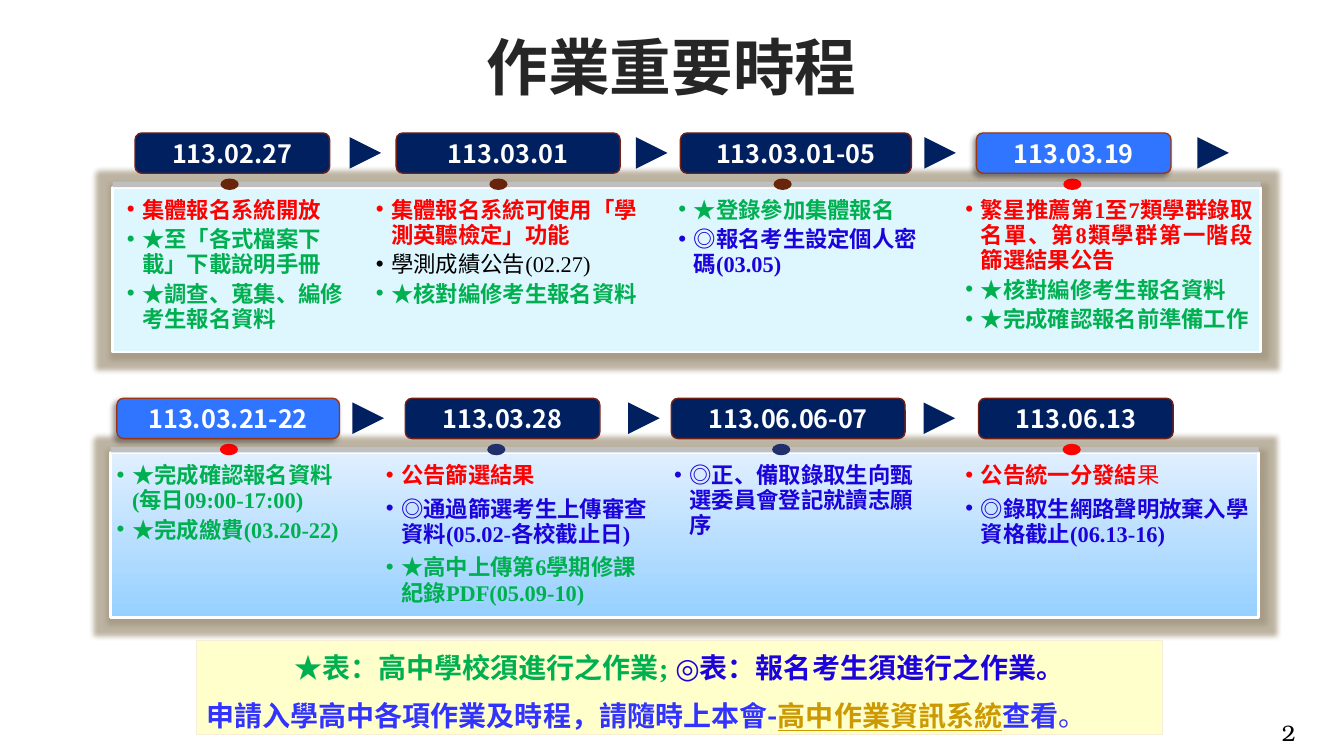
from collections import namedtuple

from lxml import etree
from pptx import Presentation
from pptx.dml.color import RGBColor
from pptx.enum import shapes as sh, text as tx
from pptx.oxml import ns
from pptx.util import Pt

COLOURS = {
    "navy": "002060", "azure": "3075FF", "brown": "732117", "rust": "9C3511",
    "red": "FF0000", "green": "00B050", "blue": "1D03DB", "black": "000000",
    "dot1": "69240C", "dot2": "21306A", "white": "FFFFFF", "bar": "BFBFBF",
    "ice": "DEF6FE", "sky": "96D0FF", "haze": "E0EFFF", "glow": "A0937A",
    "title": "262626", "cream": "FFFFCC", "edge": "F7EDD8",
    "notice": "3333FF", "gold": "CC9900",
}
SANS, SERIF, PAGE_FONT = "Noto Sans CJK SC", "Times New Roman", "TeX Gyre Bonum"

TITLE = "作業重要時程"
PAGE = "2"

# chip, body: (left, width); dot: (centre, colour); tasks: paragraphs of (text, colour)
Step = namedtuple("Step", "date chip dot body gap tasks key align", defaults=(False, "LEFT"))
# left: of the panel; arrows: centres; fill: bottom and top colour
Row = namedtuple("Row", "left fill arrows steps")

ROWS = [
    Row(80.5, ("ice", "ice"), (261, 465.5, 671.5, 866.5), [
        Step("113.02.27", (96.5, 139), (164, "dot1"), (83.5, 178), 3, [
            [("集體報名系統開放", "red")],
            [("★至「各式檔案下載」下載說明手冊", "green")],
            [("★調查、蒐集、編修考生報名資料", "green")]]),
        Step("113.03.01", (283, 160), (356, "dot1"), (261.4, 207.4), 3, [
            [("集體報名系統可使用「學測英聽檢定」功能", "red")],
            [("學測成績公告(02.27)", "black", False)],
            [("★核對編修考生報名資料", "green")]]),
        Step("113.03.01-05", (486, 165), (559, "dot1"), (477.5, 196.5), 3, [
            [("★登錄參加集體報名", "green")],
            [("◎報名考生設定個人密碼(03.05)", "blue")]]),
        Step("113.03.19", (697.5, 139), (766, "red"), (682.5, 219.6), 3, [
            [("繁星推薦第1至7類學群錄取名單、第8類學群第一階段篩選結果公告", "red")],
            [("★核對編修考生報名資料", "green")],
            [("★完成確認報名前準備工作", "green")]], True, "JUSTIFY"),
    ]),
    Row(79, ("sky", "haze"), (263, 460, 671), [
        Step("113.03.21-22", (83.5, 159), (163.5, "red"), (76.3, 175.7), 3, [
            [("★完成確認報名資料(每日09:00-17:00)", "green")],
            [("★完成繳費(03.20-22)", "green")]], True),
        Step("113.03.28", (289.5, 139), (354.5, "dot2"), (268.6, 201.6), 6, [
            [("公告篩選結果", "red")],
            [("◎通過篩選考生上傳審查資料(05.02-各校截止日)", "blue")],
            [("★高中上傳第6學期修課紀錄PDF(05.09-10)", "green")]]),
        Step("113.06.06-07", (479.5, 167), (558, "dot2"), (474.5, 199.4), 6, [
            [("◎正、備取錄取生向甄選委員會登記就讀志願序", "blue")]]),
        Step("113.06.13", (699, 139), (765.5, "red"), (682.5, 221.8), 6, [
            [("公告統一分發結", "red"), ("果", "red", False)],
            [("◎錄取生網路聲明放棄入學資格截止(06.13-16)", "blue")]]),
    ]),
]
KEY_LINE = [("★表：高中學校須進行之作業; ", "green"), ("◎表：報名考生須進行之作業。", "blue")]
NOTICE = [("申請入學高中各項作業及時程，請隨時上本會-", "notice"),
          ("高中作業資訊系統", "gold", True, True),
          ("查看", "notice"), ("。", "notice", False)]

ROW_TOP, ROW_PITCH, PANEL_WIDTH = 95, 189.5, 820
CHIP_HEIGHT, BAR_HEIGHT, ARROW = 28.8, 4, 22.5
DOT_WIDTH, DOT_HEIGHT = 13, 8.2
# offsets from the top of the date chips
ARROW_Y, DOT_Y, BAR_Y, PANEL_Y, BODY_Y = 3, 32.5, 34.7, 39, 42.6


def rgb(name):
    return RGBColor.from_string(COLOURS[name])


def sub(parent, tag, **attributes):
    return etree.SubElement(parent, ns.qn(tag), attributes)


def add_block(kind, left, top, width, height, fill, line=None, weight=1):
    block = slide.shapes.add_shape(kind, Pt(left), Pt(top), Pt(width), Pt(height))
    block.shadow.inherit = False
    block.fill.solid()
    block.fill.fore_color.rgb = rgb(fill)
    if line:
        block.line.color.rgb = rgb(line)
        block.line.width = Pt(weight)
    else:
        block.line.fill.background()
    return block


def add_effect(block, tag, colour, alpha, **attributes):
    effects = block._element.spPr.find(ns.qn("a:effectLst"))
    tint = sub(sub(effects, tag, **attributes), "a:srgbClr", val=COLOURS[colour])
    sub(tint, "a:alpha", val=str(alpha * 1000))


def add_box(left, top, width, height):
    box = slide.shapes.add_textbox(Pt(left), Pt(top), Pt(width), Pt(height))
    box.text_frame.word_wrap = True
    return box.text_frame


def add_run(paragraph, words, colour, bold=True, underline=False, *, size, font):
    run = paragraph.add_run()
    run.text = words
    run.font.size, run.font.name = Pt(size), font
    run.font.bold, run.font.underline = bold, underline
    run.font.color.rgb = rgb(colour)
    sub(run.font._element, "a:ea", typeface=PAGE_FONT if font == PAGE_FONT else SANS)


def write(frame, paragraphs, size, font, align="LEFT", spacing=None, gap=0, bullet=False):
    for i, runs in enumerate(paragraphs):
        paragraph = frame.add_paragraph() if i else frame.paragraphs[0]
        paragraph.alignment = getattr(tx.PP_ALIGN, align)
        if spacing:
            paragraph.line_spacing = Pt(spacing)
        if i:
            paragraph.space_before = Pt(gap)
        if bullet:
            properties = paragraph._p.get_or_add_pPr()
            properties.set("marL", str(Pt(11)))
            properties.set("indent", str(-Pt(11)))
            sub(properties, "a:buFont", typeface="Arial")
            sub(properties, "a:buChar", char="•")
        for run in runs:
            add_run(paragraph, *run, size=size, font=font)


def add_panel(row, top):
    panel = add_block(sh.MSO_SHAPE.RECTANGLE, row.left, top + PANEL_Y,
                      PANEL_WIDTH, 117.5, row.fill[0], "white", 2)
    add_effect(panel, "a:glow", "glow", 70, rad=str(Pt(8)))
    if row.fill[0] != row.fill[1]:
        panel.fill.gradient()
        panel.fill.gradient_angle = 90
        for stop, colour in zip(panel.fill.gradient_stops, row.fill):
            stop.color.rgb = rgb(colour)
    add_block(sh.MSO_SHAPE.RECTANGLE, row.left, top + BAR_Y, PANEL_WIDTH, BAR_HEIGHT, "bar")


def add_step(step, top):
    centre, dot_colour = step.dot
    add_block(sh.MSO_SHAPE.OVAL, centre - DOT_WIDTH / 2, top + DOT_Y,
              DOT_WIDTH, DOT_HEIGHT, dot_colour)
    left, width = step.chip
    fill, line = ("azure", "rust") if step.key else ("navy", "brown")
    chip = add_block(sh.MSO_SHAPE.ROUNDED_RECTANGLE, left, top, width, CHIP_HEIGHT, fill, line)
    if step.key:
        add_effect(chip, "a:outerShdw", "black", 40, blurRad=str(Pt(4)),
                   dist=str(Pt(3)), dir=str(135 * 60000))
    chip.text_frame.vertical_anchor = tx.MSO_ANCHOR.MIDDLE
    write(chip.text_frame, [[(step.date, "white")]], 18, SANS, "CENTER")
    left, width = step.body
    write(add_box(left, top + BODY_Y, width, 105), step.tasks, 16, SERIF,
          step.align, 18, step.gap, bullet=True)


deck = Presentation()
deck.slide_width, deck.slide_height = Pt(960), Pt(540)
slide = deck.slides.add_slide(deck.slide_layouts[5])

title = slide.shapes.title
title.left, title.top, title.width, title.height = Pt(152.6), Pt(21.6), Pt(654.5), Pt(51)
title.text_frame.vertical_anchor = tx.MSO_ANCHOR.MIDDLE
title.text_frame.auto_size = tx.MSO_AUTO_SIZE.NONE
write(title.text_frame, [[(TITLE, "title")]], 44, SANS, "CENTER")

for number, row in enumerate(ROWS):
    top = ROW_TOP + number * ROW_PITCH
    add_panel(row, top)
    for step in row.steps:
        add_step(step, top)
    for centre in row.arrows:
        arrow = add_block(sh.MSO_SHAPE.ISOSCELES_TRIANGLE, centre - ARROW / 2,
                          top + ARROW_Y, ARROW, ARROW, "navy")
        arrow.rotation = 90

legend = add_block(sh.MSO_SHAPE.RECTANGLE, 140.4, 457.2, 689.8, 67.7, "cream", "edge", 0.5)
legend.text_frame.vertical_anchor = tx.MSO_ANCHOR.TOP
write(legend.text_frame, [KEY_LINE], 20, SERIF, "CENTER", 28)
notice = legend.text_frame.add_paragraph()
notice.alignment = tx.PP_ALIGN.JUSTIFY
notice.line_spacing, notice.space_before = Pt(28), Pt(6)
for run in NOTICE:
    add_run(notice, *run, size=20, font=SANS)

write(add_box(908.6, 509.8, 49.7, 26.6), [[(PAGE, "black", False)]], 16, PAGE_FONT)

deck.save("out.pptx")
